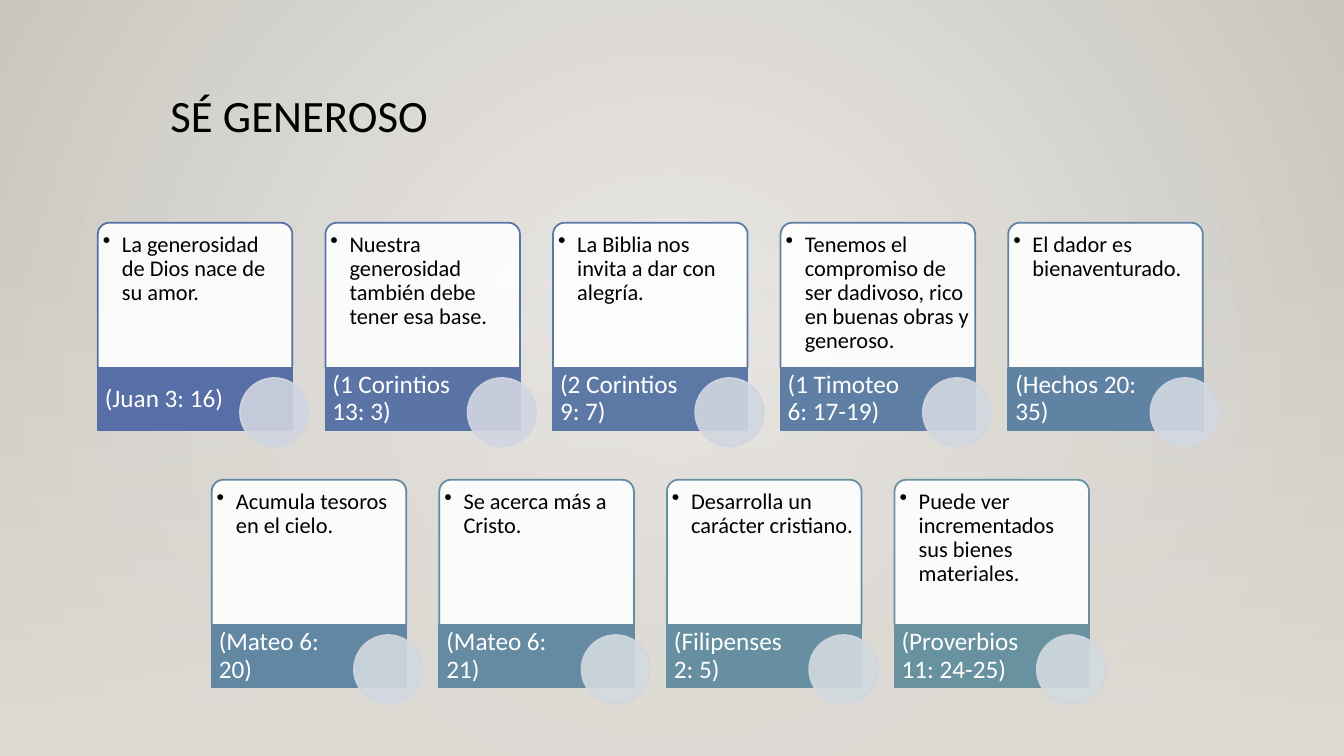
from lxml import etree
from pptx import Presentation
from pptx.dml.color import RGBColor
from pptx.enum.shapes import MSO_SHAPE
from pptx.enum.text import MSO_ANCHOR
from pptx.oxml.ns import qn
from pptx.util import Inches, Pt

RECT, OVAL = MSO_SHAPE.RECTANGLE, MSO_SHAPE.OVAL
ROUND_TOP = MSO_SHAPE.ROUND_2_SAME_RECTANGLE
TOP, MIDDLE = MSO_ANCHOR.TOP, MSO_ANCHOR.MIDDLE

BLACK = RGBColor(0x00, 0x00, 0x00)
WHITE = RGBColor(0xFF, 0xFF, 0xFF)
BG_CENTER = RGBColor(0xEC, 0xEA, 0xE7)
BG_EDGE = RGBColor(0xCA, 0xC7, 0xC1)
FLOOR = RGBColor(0xDF, 0xDB, 0xD5)
DOT_LINE = RGBColor(0xD1, 0xD5, 0xE1)

# Per card: text, Bible reference, band colour, dot colour
ROWS = [
    (0.97, 2.21, [
        ("La generosidad de Dios nace de su amor.", "(Juan 3: 16)", "586EA6", "D1D5E1"),
        ("Nuestra generosidad también debe tener esa base.", "(1 Corintios 13: 3)", "5A74A5", "D2D6E1"),
        ("La Biblia nos invita a dar con alegría.", "(2 Corintios 9: 7)", "5C79A5", "D2D7E0"),
        ("Tenemos el compromiso de ser dadivoso, rico en buenas obras y generoso.",
         "(1 Timoteo 6: 17-19)", "5E7EA4", "D2D8E0"),
        ("El dador es bienaventurado.", "(Hechos 20: 35)", "6083A3", "D2D9E0"),
    ]),
    (2.1, 4.76, [
        ("Acumula tesoros en el cielo.", "(Mateo 6: 20)", "6287A2", "D3DAE0"),
        ("Se acerca más a Cristo.", "(Mateo 6: 21)", "648BA2", "D3DAE0"),
        ("Desarrolla un carácter cristiano.", "(Filipenses 2: 5)", "668FA1", "D3DBE0"),
        ("Puede ver incrementados sus bienes materiales.", "(Proverbios 11: 24-25)", "6892A0", "D4DCDF"),
    ]),
]
PITCH = (10 - 0.97) / 4
CARD_W, CARD_H, BAND_H, DOT = 1.93, 1.44, 0.62, 0.68


def add_panel(kind, x, y, w, h, fill, line, alpha=None):
    sp = s.shapes.add_shape(kind, Inches(x), Inches(y), Inches(w), Inches(h))
    sp.shadow.inherit = False
    sp.fill.solid()
    sp.fill.fore_color.rgb = fill
    sp.line.color.rgb = line
    sp.line.width = Pt(1.25)
    if alpha:
        clr = sp._element.spPr.find(qn("a:solidFill"))[0]
        etree.SubElement(clr, qn("a:alpha"), val=str(alpha * 1000))
    return sp


def add_label(x, y, w, h, text, size, color, insets, anchor, bullet=False):
    tf = s.shapes.add_textbox(Inches(x), Inches(y), Inches(w), Inches(h)).text_frame
    tf.word_wrap = True
    tf.vertical_anchor = anchor
    tf.margin_left, tf.margin_top, tf.margin_right, tf.margin_bottom = map(Inches, insets)
    p = tf.paragraphs[0]
    p.line_spacing = 0.9
    if bullet:
        p.level = 1
        pPr = p._p.get_or_add_pPr()
        pPr.set("marL", str(Inches(0.19)))
        pPr.set("indent", str(-Inches(0.19)))
        etree.SubElement(pPr, qn("a:buChar"), char="•")
    r = p.add_run()
    r.text = text
    r.font.name = "Calibri"
    r.font.size = Pt(size)
    r.font.color.rgb = color


prs = Presentation()
prs.slide_width, prs.slide_height = Inches(13.33), Inches(7.5)
s = prs.slides.add_slide(prs.slide_layouts[5])

# Radial background
bg = s.background.fill
bg.gradient()
for stop, color in zip(bg.gradient_stops, (BG_CENTER, BG_EDGE)):
    stop.color.rgb = color
lin = next(s._element.iter(qn("a:lin")))
radial = etree.Element(qn("a:path"), path="circle")
etree.SubElement(radial, qn("a:fillToRect"), l="50000", t="50000", r="50000", b="50000")
lin.getparent().replace(lin, radial)

# Floor that fades in towards the bottom, behind everything
floor = s.shapes.add_shape(RECT, 0, Inches(2.21), prs.slide_width, Inches(5.29))
floor.shadow.inherit = False
floor.line.fill.background()
floor.fill.gradient()
floor.fill.gradient_angle = 270
for stop in floor.fill.gradient_stops:
    stop.color.rgb = FLOOR
first_color = next(floor._element.iter(qn("a:srgbClr")))
etree.SubElement(first_color, qn("a:alpha"), val="0")
s.shapes._spTree.insert(2, floor._element)

# Title
title = s.shapes.title
title.left, title.top, title.width, title.height = map(Inches, (1.59, 0.88, 10.5, 1.15))
tf = title.text_frame
tf.vertical_anchor = TOP
p = tf.paragraphs[0]
p.alignment = 1
p.line_spacing = 0.9
r = p.add_run()
r.text = "SÉ GENEROSO"
r.font.name = "Calibri"
r.font.size = Pt(32)
r.font.color.rgb = BLACK

# Cards: rounded top, reference band, dot on the band's corner
for row_left, top, cards in ROWS:
    for i, (text, reference, band_hex, dot_hex) in enumerate(cards):
        x, band_top = row_left + i * PITCH, top + CARD_H
        band = RGBColor.from_string(band_hex)
        card = add_panel(ROUND_TOP, x, top, CARD_W, CARD_H, WHITE, band, 90)
        card.adjustments[0] = 0.08
        add_label(x + 0.03, top + 0.03, 1.86, 1.41, text, 16, BLACK,
                  (0.02, 0.07, 0.02, 0.02), TOP, bullet=True)
        add_panel(RECT, x, band_top, CARD_W, BAND_H, band, band)
        add_label(x, band_top, 1.36, BAND_H, reference, 18, WHITE,
                  (0.07, 0, 0.03, 0), MIDDLE)
        dot = add_panel(OVAL, x + 1.41, band_top + 0.1, DOT, DOT,
                        RGBColor.from_string(dot_hex), DOT_LINE, 90)
        line_color = dot._element.spPr.find(qn("a:ln")).find(qn("a:solidFill"))[0]
        etree.SubElement(line_color, qn("a:alpha"), val="90000")

prs.save("out.pptx")
